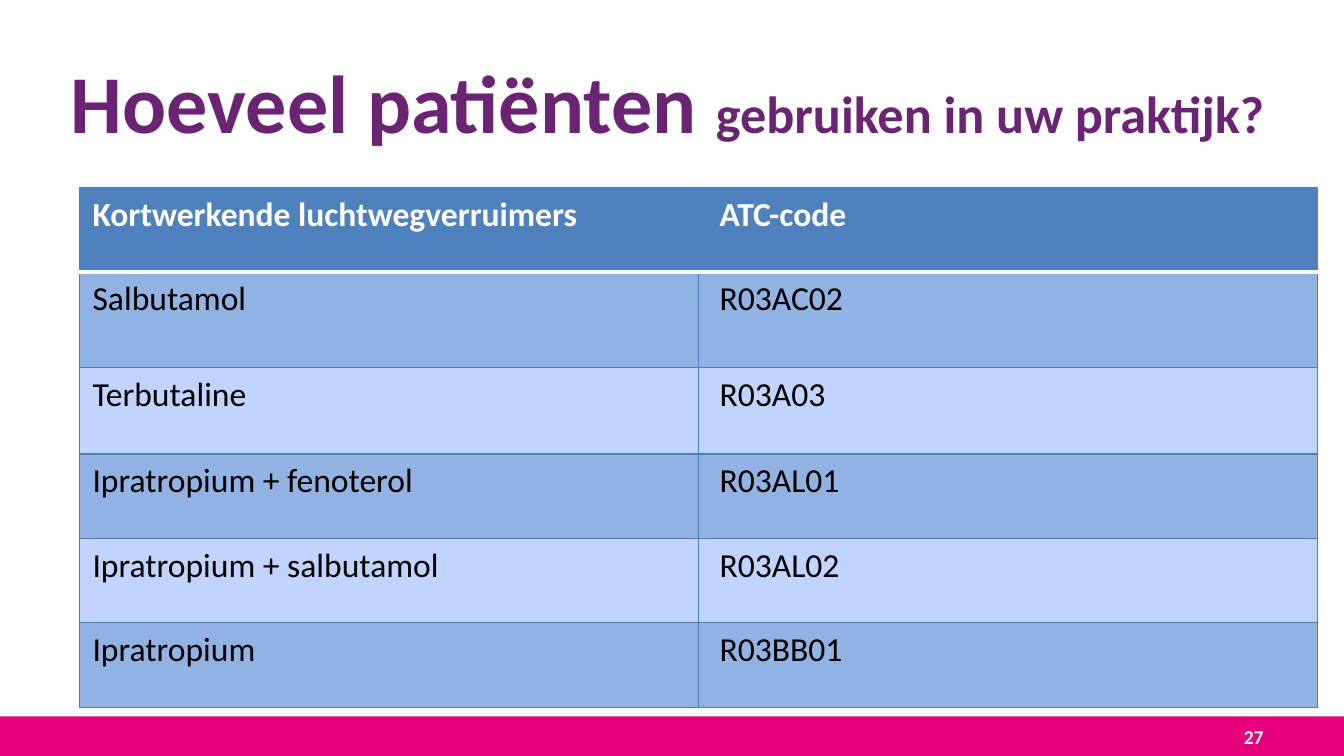
from lxml import etree
from pptx import Presentation
from pptx.dml.color import RGBColor
from pptx.enum.shapes import MSO_SHAPE
from pptx.enum.text import MSO_ANCHOR, PP_ALIGN
from pptx.oxml.ns import qn
from pptx.util import Cm, Pt

RECTANGLE = MSO_SHAPE.RECTANGLE
TOP, MIDDLE = MSO_ANCHOR.TOP, MSO_ANCHOR.MIDDLE
LEFT, RIGHT = PP_ALIGN.LEFT, PP_ALIGN.RIGHT

PURPLE, MAGENTA = "6B2473", "E5007E"
WHITE, BLACK = "FFFFFF", "000000"
HEADER_BLUE, BORDER_BLUE = "4F81BD", "4B7EBC"
BANDS = ("93B2E4", "C0D4FF")

ROWS = [
    ("Kortwerkende luchtwegverruimers", "ATC-code"),
    ("Salbutamol", "R03AC02"),
    ("Terbutaline", "R03A03"),
    ("Ipratropium + fenoterol", "R03AL01"),
    ("Ipratropium + salbutamol", "R03AL02"),
    ("Ipratropium", "R03BB01"),
]
ROW_HEIGHTS = [1.59, 1.81, 1.63, 1.6, 1.59, 1.61]
COLUMN_WIDTH = 11.7
CELL_MARGINS = (0.25, 0.4)


def color(value):
    """Turn a hex string into a colour."""
    return RGBColor.from_string(value)


class SlideBuilder:
    """Hold the style and the current slide."""

    def __init__(self, page, font="Calibri"):
        self.page = page
        self.font = font

    def style(self, span, size, ink, bold=True):
        """Format one run of text."""
        span.font.name = self.font
        span.font.size = Pt(size)
        span.font.bold = bold
        span.font.color.rgb = color(ink)

    def bar(self, left, top, width, height, fill):
        """Draw a plain filled rectangle."""
        shape = self.page.shapes.add_shape(
            RECTANGLE, Cm(left), Cm(top), Cm(width), Cm(height))
        shape.shadow.inherit = False
        shape.fill.solid()
        shape.fill.fore_color.rgb = color(fill)
        shape.line.fill.background()

    def text(self, left, top, width, height, spans, ink,
             align=LEFT, anchor=TOP, margin_top=0.13):
        """Add one paragraph made of (wording, size) spans."""
        box = self.page.shapes.add_textbox(
            Cm(left), Cm(top), Cm(width), Cm(height))
        frame = box.text_frame
        frame.word_wrap = True
        frame.vertical_anchor = anchor
        frame.margin_top = Cm(margin_top)
        para = frame.paragraphs[0]
        para.alignment = align
        for wording, size in spans:
            span = para.add_run()
            span.text = wording
            self.style(span, size, ink)

    def borders(self, cell, edges):
        """Set the cell borders from (side, colour, points) edges."""
        properties = cell._tc.get_or_add_tcPr()
        for position, (side, ink, points) in enumerate(edges):
            line = etree.Element(qn(f"a:ln{side}"), w=str(Pt(points)))
            fill = etree.SubElement(line, qn("a:solidFill"))
            etree.SubElement(fill, qn("a:srgbClr"), val=ink)
            properties.insert(position, line)

    def table(self, left, top, rows, heights, column_width, margins):
        """Add a table with a header row and banded body rows."""
        table = self.page.shapes.add_table(
            len(rows), len(margins), Cm(left), Cm(top),
            Cm(column_width * len(margins)), Cm(sum(heights))).table
        for column in table.columns:
            column.width = Cm(column_width)
        thin, thick = (BORDER_BLUE, 0.75), (WHITE, 2)
        for index, (values, height) in enumerate(zip(rows, heights)):
            table.rows[index].height = Cm(height)
            header = index == 0
            fill = HEADER_BLUE if header else BANDS[(index - 1) % 2]
            upper = thick if index == 1 else thin
            lower = thick if header else thin
            for column, (value, margin) in enumerate(zip(values, margins)):
                cell = table.cell(index, column)
                cell.text_frame.text = value
                cell.margin_left = Cm(margin)
                cell.fill.solid()
                cell.fill.fore_color.rgb = color(fill)
                self.style(cell.text_frame.paragraphs[0].runs[0], 18,
                           WHITE if header else BLACK, header)
                self.borders(cell, [("L", *thin), ("R", *thin),
                                    ("T", *upper), ("B", *lower)])


def main():
    """Build and save the slide."""
    deck = Presentation()
    deck.slide_width, deck.slide_height = Cm(25.4), Cm(14.29)
    builder = SlideBuilder(deck.slides.add_slide(deck.slide_layouts[6]))
    builder.bar(0, 13.54, 25.4, 0.75, MAGENTA)
    builder.text(1.09, 0.74, 23.4, 2,
                 [("Hoeveel patiënten ", 44), ("gebruiken in uw praktijk?", 28)],
                 PURPLE, margin_top=0.23)
    builder.text(18.21, 13.54, 5.92, 0.76, [("27", 10.5)], WHITE, RIGHT, MIDDLE)
    builder.table(1.5, 3.55, ROWS, ROW_HEIGHTS, COLUMN_WIDTH, CELL_MARGINS)
    deck.save("out.pptx")


if __name__ == "__main__":
    main()
